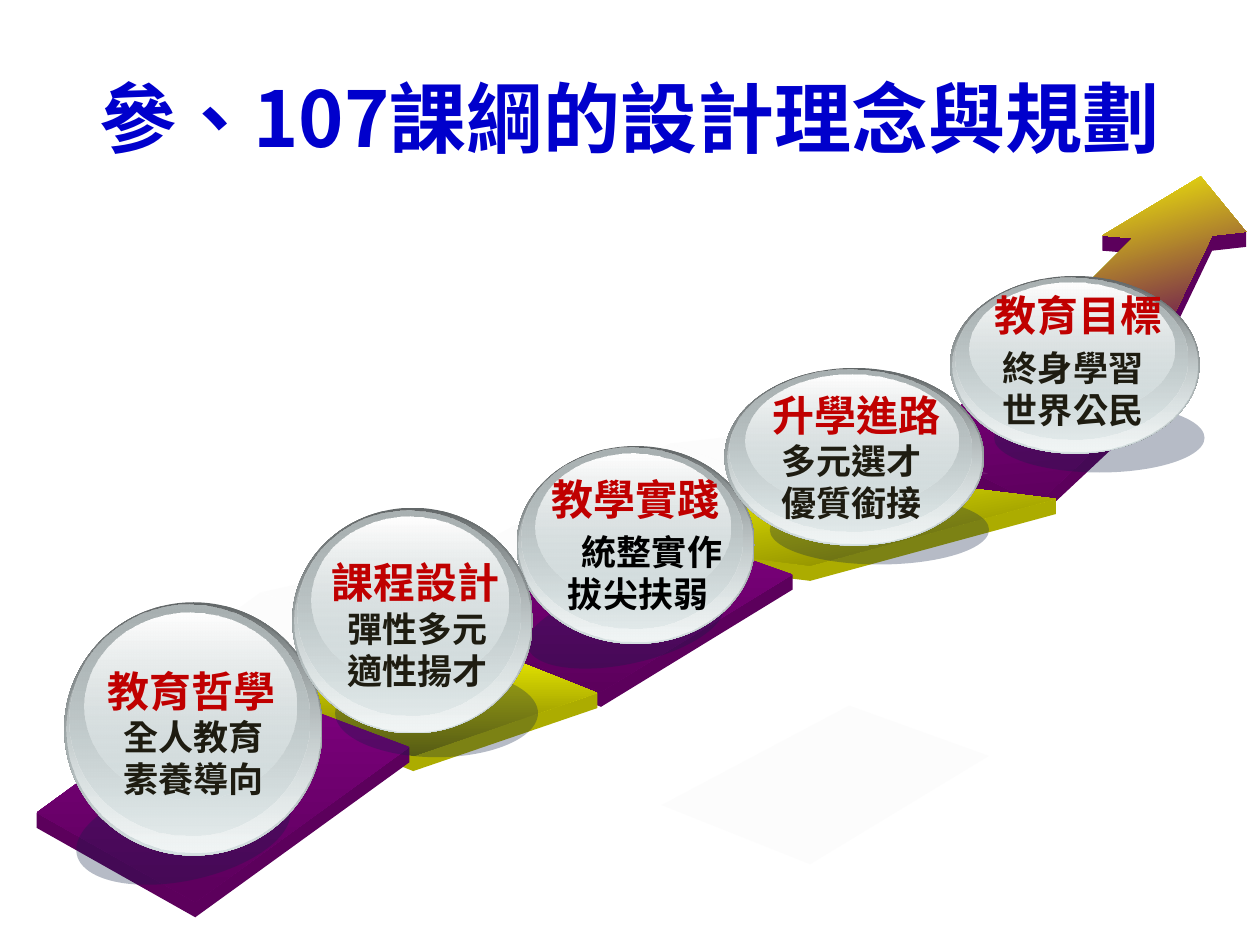
from dataclasses import dataclass

from lxml.etree import SubElement
from pptx import Presentation
from pptx.dml.color import RGBColor
from pptx.enum.shapes import MSO_SHAPE as Shape
from pptx.enum.text import MSO_ANCHOR as Anchor, MSO_AUTO_SIZE as AutoSize, PP_ALIGN as Align
from pptx.oxml.ns import qn
from pptx.util import Inches, Pt

COLUMNS, ROWS = 10, 7.5  # grid of one-inch cells
PURPLE = ["800080", "5C005C"]
YELLOW = ["FFFF00", "767600"]
GOLD = ["FFFF00", "5C005C"]
PURPLE_SIDE, YELLOW_SIDE = "5C005C", "ACAC00"

# Glass layers: left, top, width, height as shares of the ball, then colours
GLASS = [
    ((0, 0, 1, 1), ["636869", "D6E1E2"]),
    ((0.01, 0.01, 0.98, 0.98), [("D6E1E2", 0), "F1F5F5"]),
    ((0.02, 0.01, 0.93, 0.91), ["AAB2B3", ("D6E1E2", 48)]),
    ((0.08, 0.04, 0.82, 0.74), ["FFFFFF", ("D6E1E2", 38)]),
]

FAINT_TILES = [
    [(5.32, 3.52), (6.42, 3.91), (7.84, 3.76), (6.73, 3.36)],
    [(3.82, 4.31), (5, 4.78), (6.42, 3.91), (5.32, 3.52)],
    [(2.08, 4.7), (3.53, 5.27), (4.99, 4.78), (3.81, 4.31)],
    [(0.59, 5.78), (1.85, 6.49), (3.55, 5.26), (2.07, 4.7)],
    [(5.25, 6.39), (6.43, 6.86), (7.85, 6), (6.74, 5.6)],
]

# Lower edge from left to right, remaining corners, face, side, gradient angle
TOP_TILE = ([(7.29, 3.53), (8.23, 4), (9.36, 2.94)], [(8.27, 2.61)], PURPLE, PURPLE_SIDE, 85)
ARROW = ([(8.75, 1.87), (8.99, 1.89), (8.28, 2.6), (9.24, 2.66), (9.62, 1.87), (9.89, 1.84)],
         [(9.53, 1.4)], GOLD, PURPLE_SIDE, 74)
STEPS = [
    ([(4.8, 4.29), (6.43, 4.49), (8.38, 3.96)], [(6.75, 3.76)], YELLOW, YELLOW_SIDE, 80),
    ([(3.51, 4.98), (4.77, 5.49), (6.29, 4.56)], [(5.11, 4.14)], PURPLE, PURPLE_SIDE, 90),
    ([(1.82, 5.42), (3.28, 6), (4.74, 5.5)], [(3.56, 5.03)], YELLOW, YELLOW_SIDE, 90),
    ([(0.29, 6.45), (1.55, 7.16), (3.25, 5.93)], [(1.77, 5.37)], PURPLE, PURPLE_SIDE, 90),
]

# Ball box, shadow box, shadow rotation
BALLS = [
    ((0.51, 4.78, 2.05, 2.01), (0.59, 6.21, 1.73, 0.78), 347.9),
    ((4.1, 3.54, 1.89, 1.57), (4.17, 4.66, 1.59, 0.61), 347.9),
    ((2.32, 4.03, 1.91, 1.79), (2.66, 5.31, 1.61, 0.7), 0),
    ((5.75, 2.92, 2.06, 1.41), (6.11, 3.93, 1.74, 0.55), 0),
    ((7.54, 2.19, 1.98, 1.41), (7.89, 3.2, 1.67, 0.55), 0),
]


def colour(value):
    return RGBColor.from_string(value)


def paint(shape, stops, angle=90):
    """Fill with one colour or a gradient; a stop is a hex or (hex, opacity in percent)."""
    shape.shadow.inherit = False
    shape.line.fill.background()
    shape.fill.background()
    empty = shape._element.spPr.find(qn("a:noFill"))
    if len(stops) == 1:
        fill = empty.makeelement(qn("a:solidFill"))
        parents = [fill]
    else:
        fill = empty.makeelement(qn("a:gradFill"), rotWithShape="1")
        stop_list = SubElement(fill, qn("a:gsLst"))
        parents = [SubElement(stop_list, qn("a:gs"), pos=position) for position in ("0", "100000")]
        SubElement(fill, qn("a:lin"), ang=str(angle * 60000), scaled="0")
    for parent, stop in zip(parents, stops):
        value, opacity = (stop, 100) if isinstance(stop, str) else stop
        node = SubElement(parent, qn("a:srgbClr"), val=value)
        if opacity < 100:
            SubElement(node, qn("a:alpha"), val=str(opacity * 1000))
    empty.getparent().replace(empty, fill)


@dataclass
class StairSlide:
    """Holds the current slide and its style."""
    slide: object
    font: str = "Noto Sans CJK SC"
    heading: str = "C00000"
    depth: float = 0.12

    def style(self, paragraph, size, value):
        font = paragraph.font
        font.size, font.bold, font.name = Pt(size), True, self.font
        font.color.rgb = colour(value)
        properties = paragraph._p.pPr.find(qn("a:defRPr"))
        properties.set("lang", "zh-TW")
        SubElement(properties, qn("a:ea"), typeface=self.font)

    def title(self, text, box):
        shape = self.slide.shapes.title
        shape.left, shape.top, shape.width, shape.height = map(Inches, box)
        frame = shape.text_frame
        frame.text = text
        frame.auto_size = AutoSize.NONE
        frame.vertical_anchor = Anchor.MIDDLE
        frame.paragraphs[0].alignment = Align.CENTER
        self.style(frame.paragraphs[0], 44, "0000CC")

    def polygon(self, points, stops, angle=90):
        start, *others = [(Inches(x), Inches(y)) for x, y in points]
        builder = self.slide.shapes.build_freeform(*start)
        builder.add_line_segments(others, close=True)
        paint(builder.convert_to_shape(), stops, angle)

    def block(self, edge, corners, face, side, angle):
        """Draw a flat face with a visible thickness below its lower edge."""
        lowered = [(x, y + self.depth) for x, y in reversed(edge)]
        self.polygon(edge + lowered, [side])
        self.polygon(edge + corners, face, angle)

    def ellipse(self, box, stops, rotation=0):
        shape = self.slide.shapes.add_shape(Shape.OVAL, *map(Inches, box))
        shape.rotation = rotation
        paint(shape, stops)

    def ball(self, box, shadow, rotation):
        self.ellipse(shadow, [("0F2145", 30)], rotation)
        left, top, width, height = box
        for (x, y, w, h), stops in GLASS:
            self.ellipse((left + x * width, top + y * height, w * width, h * height), stops)

    def label(self, left, top, lines, value="1E1C11", align=Align.CENTER, gap=0, indents=(0, 0)):
        box = self.slide.shapes.add_textbox(*map(Inches, (left, top, 1.37, 1.1)))
        frame = box.text_frame
        frame.word_wrap = True
        frame.margin_left = frame.margin_right = frame.margin_top = frame.margin_bottom = 0
        frame.text = "\n".join(lines)
        first, *body = frame.paragraphs
        first.line_spacing = Pt(28)
        self.style(first, 24, self.heading)
        for paragraph, indent in zip(body, indents):
            paragraph.alignment = align
            paragraph.line_spacing = Pt(24)
            paragraph._p.get_or_add_pPr().set("marL", str(Inches(indent)))
            self.style(paragraph, 20, value)
        body[0].space_before = Pt(gap)


def main():
    presentation = Presentation()
    presentation.slide_width, presentation.slide_height = Inches(COLUMNS), Inches(ROWS)
    stairs = StairSlide(presentation.slides.add_slide(presentation.slide_layouts[5]))

    stairs.block(*TOP_TILE)
    for points in FAINT_TILES:
        stairs.polygon(points, [("EAEAEA", 10)])
    for block in [ARROW, *STEPS]:
        stairs.block(*block)
    for ball in BALLS:
        stairs.ball(*ball)

    stairs.label(0.85, 5.29, ["教育哲學", "全人教育", "素養導向"])
    stairs.label(2.63, 4.43, ["課程設計", "彈性多元", "適性揚才"])
    stairs.label(4.38, 3.77, ["教學實踐", "統整實作", "拔尖扶弱"], "000000",
                 gap=3.5, indents=(0.22, 0))
    stairs.label(6.13, 3.1, ["升學進路", "多元選才", "優質銜接"],
                 align=Align.LEFT, indents=(0.07, 0.07))
    stairs.label(7.89, 2.31, ["教育目標", "終身學習", "世界公民"],
                 align=Align.LEFT, gap=3.5, indents=(0.07, 0.07))
    stairs.title("參、107課綱的設計理念與規劃", (0.5, 0.3, 9, 1.25))
    presentation.save("out.pptx")


if __name__ == "__main__":
    main()
